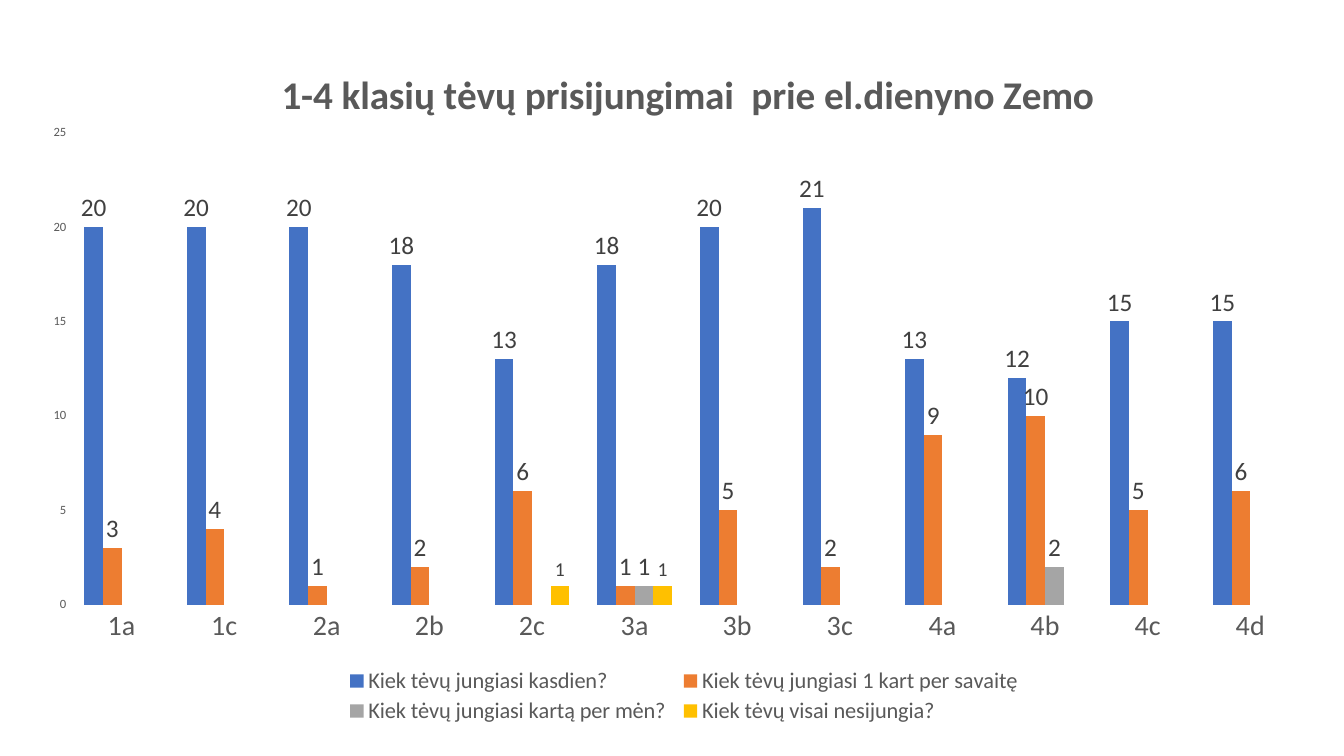
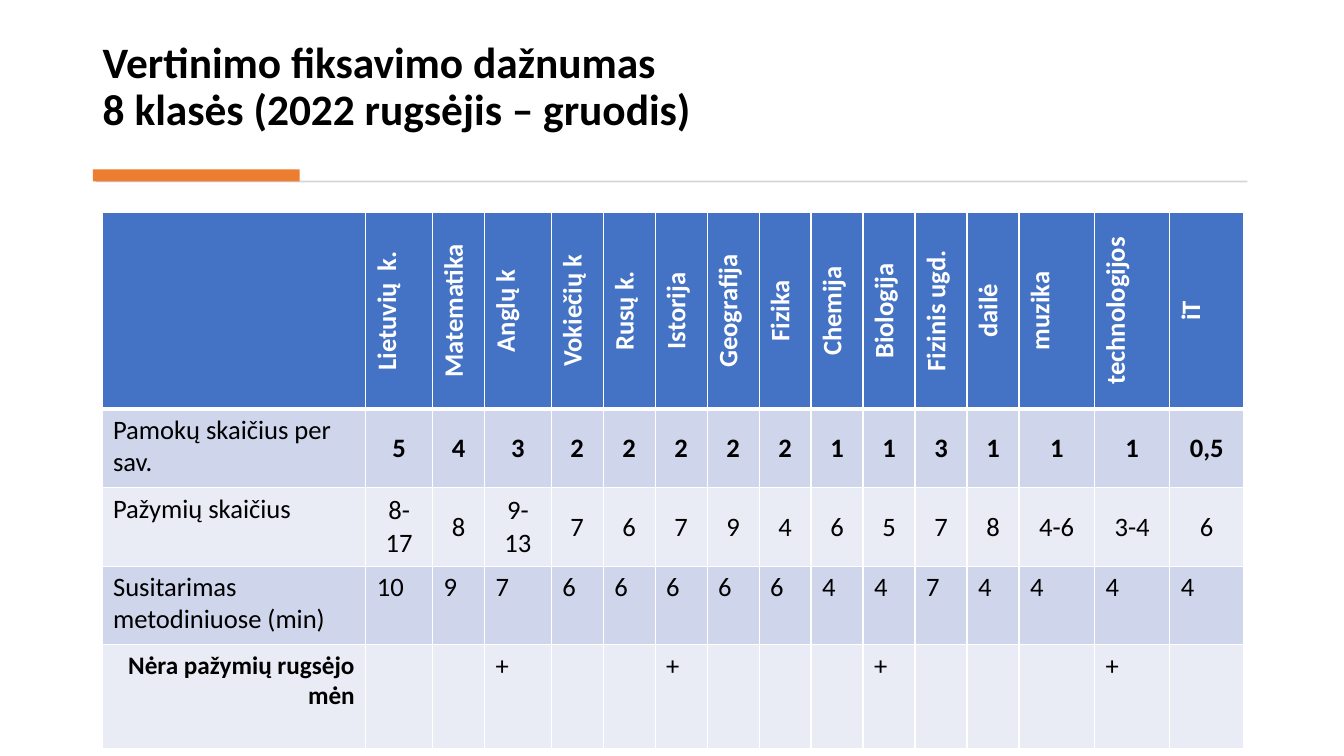
from dataclasses import dataclass
from itertools import product

from lxml import etree
from pptx import Presentation
from pptx import util as u
from pptx.chart.data import CategoryChartData
from pptx.dml.color import RGBColor
from pptx.enum import chart as ch, shapes, text
from pptx.oxml import parse_xml
from pptx.oxml.ns import nsdecls, qn

FACE = "Calibri"
BLACK = RGBColor(0x00, 0x00, 0x00)
WHITE = RGBColor(0xFF, 0xFF, 0xFF)
SLATE = RGBColor(0x59, 0x59, 0x59)
DARK = RGBColor(0x40, 0x40, 0x40)
BLUE = RGBColor(0x44, 0x72, 0xC4)
ORANGE = RGBColor(0xED, 0x7D, 0x31)
GREY = RGBColor(0xA5, 0xA5, 0xA5)
GOLD = RGBColor(0xFF, 0xC0, 0x00)
RULE = RGBColor(0xD5, 0xD5, 0xD5)
BAND = RGBColor(0xCF, 0xD5, 0xEA)
PALE = RGBColor(0xE9, 0xEB, 0xF5)

LEFT, CENTER, RIGHT = text.PP_ALIGN.LEFT, text.PP_ALIGN.CENTER, text.PP_ALIGN.RIGHT
TOP, MIDDLE = text.MSO_ANCHOR.TOP, text.MSO_ANCHOR.MIDDLE


@dataclass(frozen=True)
class Series:
    name: str
    vals: tuple
    color: RGBColor
    size: int = 18


@dataclass(frozen=True)
class Bar:
    left: float
    top: float
    width: float
    height: float
    color: RGBColor


@dataclass(frozen=True)
class Row:
    label: str
    cells: list[str]
    height: float
    fill: RGBColor
    color: RGBColor = BLACK
    bold: bool = False
    align: int = LEFT
    anchor: int = TOP
    head: bool = False
    total: bool = False


GROUPS = "1a 1c 2a 2b 2c 3a 3b 3c 4a 4b 4c 4d".split()
SERIES = [
    Series("Kiek tėvų jungiasi kasdien?",
           (20, 20, 20, 18, 13, 18, 20, 21, 13, 12, 15, 15), BLUE),
    Series("Kiek tėvų jungiasi 1 kart per savaitę",
           (3, 4, 1, 2, 6, 1, 5, 2, 9, 10, 5, 6), ORANGE),
    Series("Kiek tėvų jungiasi kartą per mėn?",
           (None,) * 5 + (1,) + (None,) * 3 + (2, None, None), GREY),
    Series("Kiek tėvų visai nesijungia?",
           (None,) * 4 + (1, 1) + (None,) * 6, GOLD, 14),
]

BARS = [
    Bar(2.41, 4.55, 29.03, 0.05, RULE),
    Bar(2.34, 4.27, 5.21, 0.3, ORANGE),
]

COLS = [6.65, 1.68, 1.31, 1.68] + [1.31] * 9 + [1.9, 1.9, 1.86]
PLUS = (3, 6, 10, 14)
ROWS = [
    Row("", ["Lietuvių  k.", "Matematika", "Anglų k", "Vokiečių k", "Rusų k.",
             "Istorija", "Geografija", "Fizika", "Chemija", "Biologija",
             "Fizinis ugd.", "dailė", "muzika", "technologijos", "iT"],
        4.95, BLUE, WHITE, True, CENTER, MIDDLE, head=True),
    Row("Pamokų skaičius per sav.", "5 4 3 2 2 2 2 2 1 1 3 1 1 1 0,5".split(),
        1.98, BAND, bold=True, align=CENTER, anchor=MIDDLE),
    Row("Pažymių skaičius", "8-17 8 9-13 7 6 7 9 4 6 5 7 8 4-6 3-4 6".split(),
        1.98, PALE, align=CENTER, anchor=MIDDLE),
    Row("Susitarimas metodiniuose (min)",
        "10 9 7 6 6 6 6 6 4 4 7 4 4 4 4".split(), 1.98, BAND),
    Row("Nėra pažymių rugsėjo mėn",
        ["+" if i in PLUS else "" for i in range(1, 16)], 2.62, PALE, total=True),
]


def style(font, size: float, color: RGBColor, bold: bool = False) -> None:
    font.name = FACE
    font.size = u.Pt(size)
    font.bold = bold
    font.color.rgb = color


def place(node, after: str | None, inner: bool = False, **spots: float) -> None:
    for old in node.findall(qn("c:layout")):
        node.remove(old)
    lay = parse_xml(f"<c:layout {nsdecls('c')}><c:manualLayout/></c:layout>")
    items = [("layoutTarget", "inner")] if inner else []
    items += [("xMode", "edge"), ("yMode", "edge"), *spots.items()]
    for tag, val in items:
        etree.SubElement(lay[0], qn(f"c:{tag}")).set("val", str(val))
    if after:
        node.find(qn(after)).addnext(lay)
    else:
        node.insert(0, lay)


def draw_chart(slide) -> None:
    data = CategoryChartData()
    data.categories = GROUPS
    for item in SERIES:
        data.add_series(item.name, item.vals)
    box = (u.Cm(0.69), u.Cm(0.84), u.Cm(32.77), u.Cm(17.58))
    chart = slide.shapes.add_chart(
        ch.XL_CHART_TYPE.COLUMN_CLUSTERED, *box, data).chart
    chart.font.name = FACE
    chart.font.size = u.Pt(10)
    chart.has_title = True
    para = chart.chart_title.text_frame.paragraphs[0]
    para.text = "1-4 klasių tėvų prisijungimai  prie el.dienyno Zemo"
    style(para.font, 28, SLATE, True)

    for axis, size in ((chart.category_axis, 20), (chart.value_axis, 9)):
        axis.major_tick_mark = axis.minor_tick_mark = ch.XL_TICK_MARK.NONE
        axis.has_major_gridlines = False
        axis.format.line.fill.background()
        style(axis.tick_labels.font, size, SLATE)
    axis = chart.value_axis
    axis.minimum_scale, axis.maximum_scale, axis.major_unit = 0, 25, 5

    plot = chart.plots[0]
    plot.gap_width, plot.overlap = 150, 0
    plot.vary_by_categories = False
    for item, line in zip(SERIES, plot.series):
        line.format.fill.solid()
        line.format.fill.fore_color.rgb = item.color
        line.invert_if_negative = False
        marks = line.data_labels
        marks.show_value = True
        marks.position = ch.XL_LABEL_POSITION.OUTSIDE_END
        style(marks.font, item.size, DARK)

    chart.has_legend = True
    chart.legend.position = ch.XL_LEGEND_POSITION.BOTTOM
    chart.legend.include_in_layout = False
    style(chart.legend.font, 16, SLATE)

    root = chart._chartSpace.find(qn("c:chart"))
    place(root.find(qn("c:title")), "c:tx", x=0.19, y=0.04)
    place(root.find(qn("c:plotArea")), None, True, x=0.033, y=0.142, w=0.947, h=0.677)
    place(root.find(qn("c:legend")), "c:legendPos", x=0.24, y=0.905, w=0.53, h=0.09)


def draw_title(slide, lines: list[str]) -> None:
    box = slide.shapes.add_textbox(u.Cm(2.34), u.Cm(0.71), u.Cm(29.18), u.Cm(2.82))
    frame = box.text_frame
    frame.word_wrap = True
    frame.vertical_anchor = text.MSO_ANCHOR.BOTTOM
    para = frame.paragraphs[0]
    for i, line in enumerate(lines):
        if i:
            para.add_line_break()
        para.add_run().text = line
    para.line_spacing = 0.9
    style(para.font, 31, BLACK, True)


def draw_bar(slide, bar: Bar) -> None:
    spot = map(u.Cm, (bar.left, bar.top, bar.width, bar.height))
    shape = slide.shapes.add_shape(shapes.MSO_SHAPE.RECTANGLE, *spot)
    shape.shadow.inherit = False
    shape.fill.solid()
    shape.fill.fore_color.rgb = bar.color
    shape.line.fill.background()


def edge(cell, top: int, base: int) -> None:
    props = cell._tc.get_or_add_tcPr()
    for i, (side, wide) in enumerate(zip("LRTB", (1, 1, top, base))):
        props.insert(i, parse_xml(
            f'<a:ln{side} {nsdecls("a")} w="{u.Pt(wide)}"><a:solidFill>'
            f'<a:srgbClr val="{WHITE}"/></a:solidFill></a:ln{side}>'))


def fill_cell(cell, row: Row, col: int) -> None:
    first = col == 0
    cell.fill.solid()
    cell.fill.fore_color.rgb = row.fill
    cell.margin_left = cell.margin_right = u.Cm(0.28)
    cell.margin_top = cell.margin_bottom = u.Cm(0.13)
    cell.vertical_anchor = TOP if first else row.anchor
    if row.head and not first:
        cell._tc.get_or_add_tcPr().set("vert", "vert270")
    para = cell.text_frame.paragraphs[0]
    para.text = row.label if first else row.cells[col - 1]
    if first:
        para.alignment = RIGHT if row.total else LEFT
        style(para.font, 18 if row.total else 19, row.color, row.total)
    else:
        para.alignment = row.align
        style(para.font, 19, row.color, row.bold)


def draw_table(slide) -> None:
    size = (u.Cm(sum(COLS)), u.Cm(sum(row.height for row in ROWS)))
    table = slide.shapes.add_table(
        len(ROWS), len(COLS), u.Cm(2.57), u.Cm(5.36), *size).table
    table.horz_banding = False
    for col, width in zip(table.columns, COLS):
        col.width = u.Cm(width)
    for line, row in zip(table.rows, ROWS):
        line.height = u.Cm(row.height)
    for r, c in product(range(len(ROWS)), range(len(COLS))):
        cell = table.cell(r, c)
        fill_cell(cell, ROWS[r], c)
        edge(cell, 3 if r == 1 else 1, 3 if r == 0 else 1)


def main() -> None:
    deck = Presentation()
    deck.slide_width, deck.slide_height = u.Cm(33.87), u.Cm(19.05)
    blank = deck.slide_layouts[6]
    draw_chart(deck.slides.add_slide(blank))
    slide = deck.slides.add_slide(blank)
    draw_title(slide, ["Vertinimo fiksavimo dažnumas",
                       "8 klasės (2022 rugsėjis – gruodis)"])
    for bar in BARS:
        draw_bar(slide, bar)
    draw_table(slide)
    deck.save("out.pptx")


if __name__ == "__main__":
    main()
